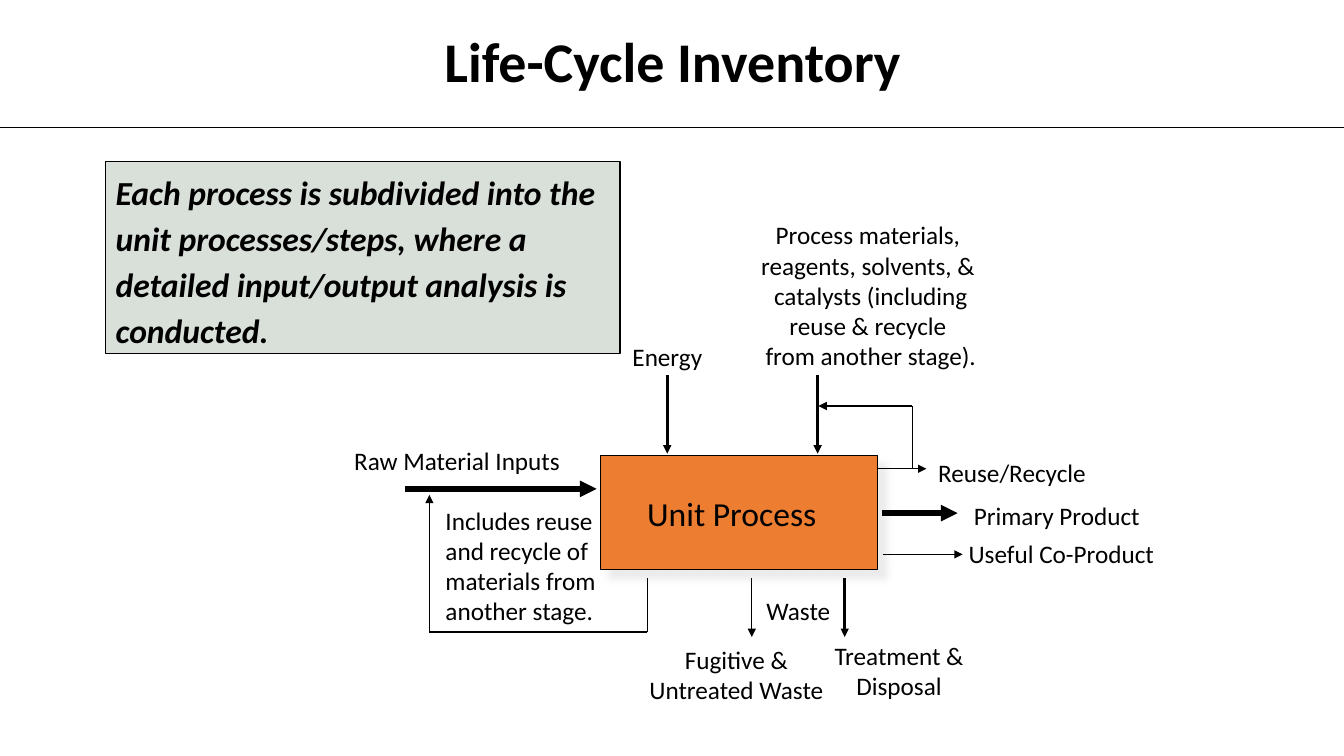
import pptx
import pptx.dml.color
import pptx.enum.shapes
import pptx.enum.text
import pptx.oxml
import pptx.oxml.ns
import pptx.util

Pt = pptx.util.Pt
ALIGN = pptx.enum.text.PP_ALIGN
RECT = pptx.enum.shapes.MSO_SHAPE.RECTANGLE
BLACK = "000000"
SLIDE_W, SLIDE_H = 960, 540

# x1, y1, x2, y2, weight, arrowhead at the end; relative to the diagram's corner
FLOWS = [
    (344, 118, 344, 174, 2, True),
    (390, 216.5, 444, 216.5, 4, True),
    (390.7, 246, 447.6, 246, 1, True),
    (393, 184.8, 411.6, 184.8, 1, False),
    (411.6, 184.8, 411.6, 140, 1, False),
    (411.6, 140, 344.6, 140, 1, True),
    (236.6, 118, 236.6, 174, 2, True),
    (49.4, 199.2, 186.2, 199.2, 4, True),
    (222.5, 263, 222.5, 301.4, 1, False),
    (222.5, 301.4, 66.7, 301.4, 1, False),
    (66.7, 301.4, 66.7, 203.5, 1, True),
    (297, 263, 297, 305, 1, True),
    (363.4, 263, 363.4, 305, 2, True),
    (387, 184.8, 421.7, 184.8, 1, True),
]

# x, y, width, height, lines; relative to the diagram's corner
LABELS = [
    (205.7, 91.2, 62, 27.4, ["Energy"]),
    (6.2, 165.4, 160.6, 27.4, ["Raw Material Inputs"]),
    (217.2, 307.2, 137.5, 49.7, ["Fugitive &", "Untreated Waste"]),
    (349.7, 304.3, 105, 49.7, ["Treatment &", "Disposal"]),
    (300, 272.6, 60.5, 27.4, ["Waste"]),
    (449, 204.2, 131.8, 27.4, ["Primary Product"]),
    (445.4, 231.6, 145.4, 27.4, ["Useful Co-Product"]),
    (421.7, 174, 122.4, 27.4, ["Reuse/Recycle"]),
    (297, 4, 170, 115.2, ["Process materials, ", "reagents, solvents, & ",
                          "catalysts (including", "reuse & recycle ",
                          "from another stage)."]),
]


def rgb(color):
    return pptx.dml.color.RGBColor.from_string(color)


def add_xml(parent, tag, **attributes):
    child = pptx.oxml.parse_xml(f"<a:{tag} {pptx.oxml.ns.nsdecls('a')}/>")
    for name, value in attributes.items():
        child.set(name, str(value))
    parent.append(child)
    return child


def write(s, lines, size, align=ALIGN.CENTER, wrap=False, inset=(5.76, 2.88),
          spacing=None, bold=None, italic=None):
    """Fill a shape with one paragraph per line, all in the same font."""
    tf = s.text_frame
    tf.word_wrap = wrap
    tf.auto_size = pptx.enum.text.MSO_AUTO_SIZE.SHAPE_TO_FIT_TEXT
    tf.vertical_anchor = pptx.enum.text.MSO_ANCHOR.TOP
    tf.margin_left = tf.margin_right = Pt(inset[0])
    tf.margin_top = tf.margin_bottom = Pt(inset[1])
    tf.text = "\n".join(lines)
    for p in tf.paragraphs:
        p.alignment = align
        if spacing:
            p.line_spacing = spacing
        p.font.name = "Calibri"
        p.font.size = Pt(size)
        p.font.bold = bold
        p.font.italic = italic
        p.font.color.rgb = rgb(BLACK)


def add_text(slide, x, y, w, h, lines, size, **style):
    s = slide.shapes.add_textbox(Pt(x), Pt(y), Pt(w), Pt(h))
    write(s, lines, size, **style)


def add_rect(slide, x, y, w, h, fill):
    s = slide.shapes.add_shape(RECT, Pt(x), Pt(y), Pt(w), Pt(h))
    s.shadow.inherit = False
    s.fill.solid()
    s.fill.fore_color.rgb = rgb(fill)
    s.line.color.rgb = rgb(BLACK)
    s.line.width = Pt(1)
    return s


def add_line(slide, x1, y1, x2, y2, weight, arrow=False):
    c = slide.shapes.add_connector(pptx.enum.shapes.MSO_CONNECTOR.STRAIGHT,
                                   Pt(x1), Pt(y1), Pt(x2), Pt(y2))
    c.line.color.rgb = rgb(BLACK)
    c.line.width = Pt(weight)
    if arrow:
        add_xml(c.line._get_or_add_ln(), "tailEnd", type="triangle")
    add_xml(c._element.spPr, "effectLst")


def add_soft_shadow(s):
    effects = s._element.spPr.find(pptx.oxml.ns.qn("a:effectLst"))
    shadow = add_xml(effects, "outerShdw", blurRad=Pt(5), dist=Pt(8.5),
                     dir=45 * 60000, algn="tl", rotWithShape=0)
    add_xml(add_xml(shadow, "srgbClr", val="E7E6E6"), "alpha", val=75000)


def add_unit_process(slide, x, y, w, h):
    add_soft_shadow(add_rect(slide, x, y, w, h, "ED7D31"))
    add_text(slide, x + 26.7, y + 23.8, 134, 34.6, ["Unit Process"], 24)


def add_diagram(slide, x, y):
    add_unit_process(slide, x + 189, y + 175.4, 198, 81.4)
    for x1, y1, x2, y2, weight, arrow in FLOWS:
        add_line(slide, x + x1, y + y1, x + x2, y + y2, weight, arrow)
    for dx, dy, w, h, lines in LABELS:
        add_text(slide, x + dx, y + dy, w, h, lines, 18)
    add_text(slide, x + 72.5, y + 207.8, 120.2, 93,
             ["Includes reuse", "and recycle of", "materials from",
              "another stage."], 18, align=ALIGN.LEFT)


def add_statement(slide, x, y, w, h):
    s = add_rect(slide, x, y, w, h, "003300")
    color = s._element.spPr.find(".//" + pptx.oxml.ns.qn("a:srgbClr"))
    add_xml(color, "alpha", val=15000)
    write(s, ["Each process is subdivided into the unit processes/steps, where a "
              "detailed input/output analysis is conducted."], 24,
          align=ALIGN.LEFT, wrap=True, inset=(7.2, 3.6), spacing=1.14,
          bold=True, italic=True)


def add_header(slide, w, h):
    """Place the title above a rule across the slide."""
    add_text(slide, 203.8, 20.9, 553, 51, ["Life-Cycle Inventory"], 40,
             wrap=True, inset=(7.2, 3.6), spacing=0.9, bold=True)
    add_line(slide, 0, h, w, h, 0.5)


def main():
    prs = pptx.Presentation()
    prs.slide_width, prs.slide_height = Pt(SLIDE_W), Pt(SLIDE_H)
    slide = prs.slides.add_slide(prs.slide_layouts[6])
    add_diagram(slide, 240, 150)
    add_statement(slide, 75.6, 115.2, 367.2, 137.5)
    add_header(slide, SLIDE_W, 90.7)
    prs.save("out.pptx")


if __name__ == "__main__":
    main()
